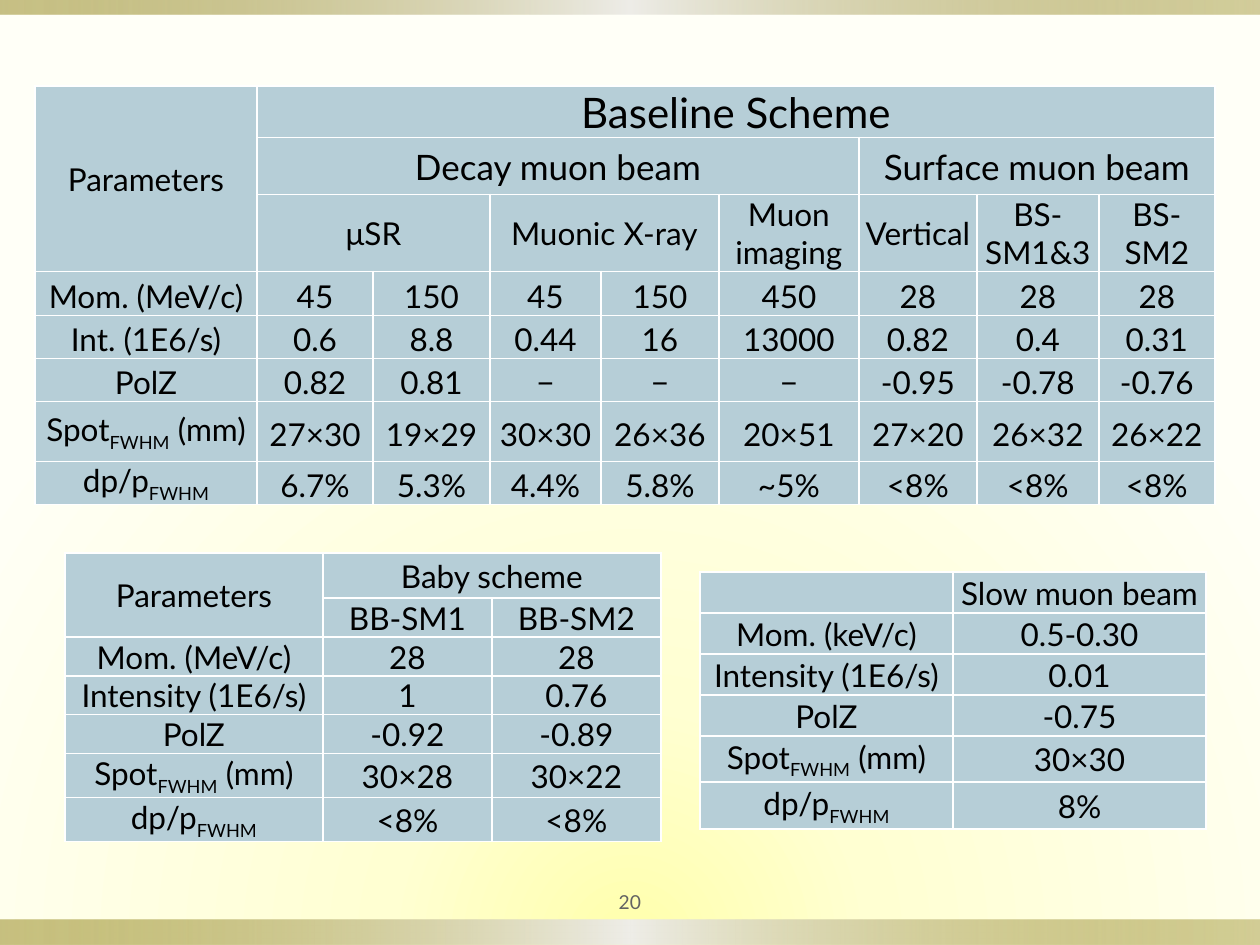
"""Build the muon beam parameter slide with its three tables."""
from lxml.etree import SubElement
from pptx import Presentation
from pptx.dml.color import RGBColor as RGB
from pptx.enum.shapes import MSO_SHAPE as SHAPE
from pptx.enum.text import MSO_ANCHOR as ANCHOR, PP_ALIGN as ALIGN
from pptx.oxml import parse_xml
from pptx.oxml.ns import nsdecls, qn
from pptx.util import Pt

PX = 914400 // 126
FONT = "Lato"
COLORS = {
    "glow": "FFFFAC", "cream": "FFFFD2", "ivory": "FFFFF7",
    "olive": "918415", "silver": "EEEDE8",
    "cell": "B6CED7", "border": "FFFFFF", "text": "000000", "number": "636363",
}


def set_gradient(root, stops, direction):
    gradient = next(root.iter(qn("a:gradFill")))
    del gradient[:]
    stop_list = SubElement(gradient, qn("a:gsLst"))
    for position, color, alpha in stops:
        stop = SubElement(stop_list, qn("a:gs"), pos=str(position * 1000))
        tint = SubElement(stop, qn("a:srgbClr"), val=COLORS[color])
        if alpha < 100:
            SubElement(tint, qn("a:alpha"), val=str(alpha * 1000))
    gradient.append(parse_xml(direction))


def write(paragraph, text, size, color):
    paragraph.alignment = ALIGN.CENTER
    for index, part in enumerate(text.split("_")):
        if part:
            run = paragraph.add_run()
            run.text = part
            run.font.name = FONT
            run.font.size = Pt(size)
            run.font.color.rgb = RGB.from_string(COLORS[color])
            if index % 2:
                run.font._element.set("baseline", "-25000")


deck = Presentation()
deck.slide_width, deck.slide_height = 1260 * PX, 945 * PX
slide = deck.slides.add_slide(deck.slide_layouts[6])

slide.background.fill.gradient()
set_gradient(
    slide._element,
    [(0, "glow", 100), (31, "cream", 100), (100, "ivory", 100)],
    f'<a:path {nsdecls("a")} path="circle">'
    '<a:fillToRect l="50000" t="150000" r="50000" b="0"/></a:path>',
)

for top, height in [(920, 25), (0, 15)]:
    band = slide.shapes.add_shape(SHAPE.RECTANGLE, 0, top * PX, 1260 * PX, height * PX)
    band.shadow.inherit = False
    band.line.fill.background()
    band.fill.gradient()
    set_gradient(
        band._element,
        [(0, "olive", 50), (50, "silver", 100), (100, "olive", 40)],
        f'<a:lin {nsdecls("a")} ang="0" scaled="0"/>',
    )

page_box = slide.shapes.add_textbox(567 * PX, 882 * PX, 126 * PX, 39 * PX)
page_frame = page_box.text_frame
page_frame.word_wrap = True
page_frame.vertical_anchor = ANCHOR.MIDDLE
page_frame.margin_left = page_frame.margin_right = 6 * PX
page_frame.margin_top = page_frame.margin_bottom = 6 * PX
write(page_frame.paragraphs[0], "20", 11, "number")

baseline = {
    "at": (35, 86),
    "columns": [222, 116, 117, 111, 118, 140, 118, 122, 116],
    "heights": [51, 57, 77, 44, 43, 43, 60, 43],
    "merges": [(0, 0, 2, 0), (0, 1, 0, 8), (1, 1, 1, 5), (1, 6, 1, 8),
               (2, 1, 2, 2), (2, 3, 2, 4)],
    "sizes": {0: 24, 1: 20},
    "spaced_from": 3,
    "rows": [
        "Parameters|Baseline Scheme|||||||",
        "|Decay muon beam|||||Surface muon beam||",
        "|μSR||Muonic X-ray||Muon imaging|Vertical|BS-SM1&3|BS-\nSM2",
        "Mom. (MeV/c)|45|150|45|150|450|28|28|28",
        "Int. (1E6/s)|0.6|8.8|0.44|16|13000|0.82|0.4|0.31",
        "PolZ|0.82|0.81|−|−|−|-0.95|-0.78|-0.76",
        "Spot_FWHM_ (mm)|27×30|19×29|30×30|26×36|20×51|27×20|26×32|26×22",
        "dp/p_FWHM_|6.7%|5.3%|4.4%|5.8%|~5%|<8%|<8%|<8%",
    ],
}
slow_beam = {
    "at": (700, 572),
    "columns": [253, 253],
    "heights": [41, 41, 41, 41, 46, 47],
    "merges": [],
    "sizes": {},
    "spaced_from": 6,
    "rows": [
        "|Slow muon beam",
        "Mom. (keV/c)|0.5-0.30",
        "Intensity (1E6/s)|0.01",
        "PolZ|-0.75",
        "Spot_FWHM_ (mm)|30×30",
        "dp/p_FWHM_|8%",
    ],
}
baby = {
    "at": (65, 553),
    "columns": [258, 169, 169],
    "heights": [45, 38, 39, 38, 39, 43, 43],
    "merges": [(0, 0, 1, 0), (0, 1, 0, 2)],
    "sizes": {},
    "spaced_from": 7,
    "rows": [
        "Parameters|Baby scheme|",
        "|BB-SM1|BB-SM2",
        "Mom. (MeV/c)|28|28",
        "Intensity (1E6/s)|1|0.76",
        "PolZ|-0.92|-0.89",
        "Spot_FWHM_ (mm)|30×28|30×22",
        "dp/p_FWHM_|<8%|<8%",
    ],
}

for scheme in (baseline, slow_beam, baby):
    columns, heights = scheme["columns"], scheme["heights"]
    left, top = scheme["at"]
    grid = slide.shapes.add_table(
        len(heights), len(columns), left * PX, top * PX,
        sum(columns) * PX, sum(heights) * PX,
    ).table
    grid.first_row = grid.horz_banding = False
    for column, width in zip(grid.columns, columns):
        column.width = width * PX
    for row, height in zip(grid.rows, heights):
        row.height = height * PX

    for row_index, line in enumerate(scheme["rows"]):
        for column_index, text in enumerate(line.split("|")):
            cell = grid.cell(row_index, column_index)
            cell.vertical_anchor = ANCHOR.MIDDLE
            cell.margin_left = cell.margin_right = cell.margin_top = PX
            cell.margin_bottom = 0
            properties = cell._tc.get_or_add_tcPr()
            for side in "LRTB":
                edge = SubElement(properties, qn(f"a:ln{side}"), w=str(Pt(1)))
                ink = SubElement(edge, qn("a:solidFill"))
                SubElement(ink, qn("a:srgbClr"), val=COLORS["border"])
            cell.fill.solid()
            cell.fill.fore_color.rgb = RGB.from_string(COLORS["cell"])
            size = scheme["sizes"].get(row_index, 18) if column_index else 18
            for index, words in enumerate(text.split("\n")):
                frame = cell.text_frame
                paragraph = frame.add_paragraph() if index else frame.paragraphs[0]
                write(paragraph, words, size, "text")
                if row_index >= scheme["spaced_from"]:
                    paragraph.line_spacing = Pt(24)

    for first_row, first_column, last_row, last_column in scheme["merges"]:
        grid.cell(first_row, first_column).merge(grid.cell(last_row, last_column))

deck.save("out.pptx")
